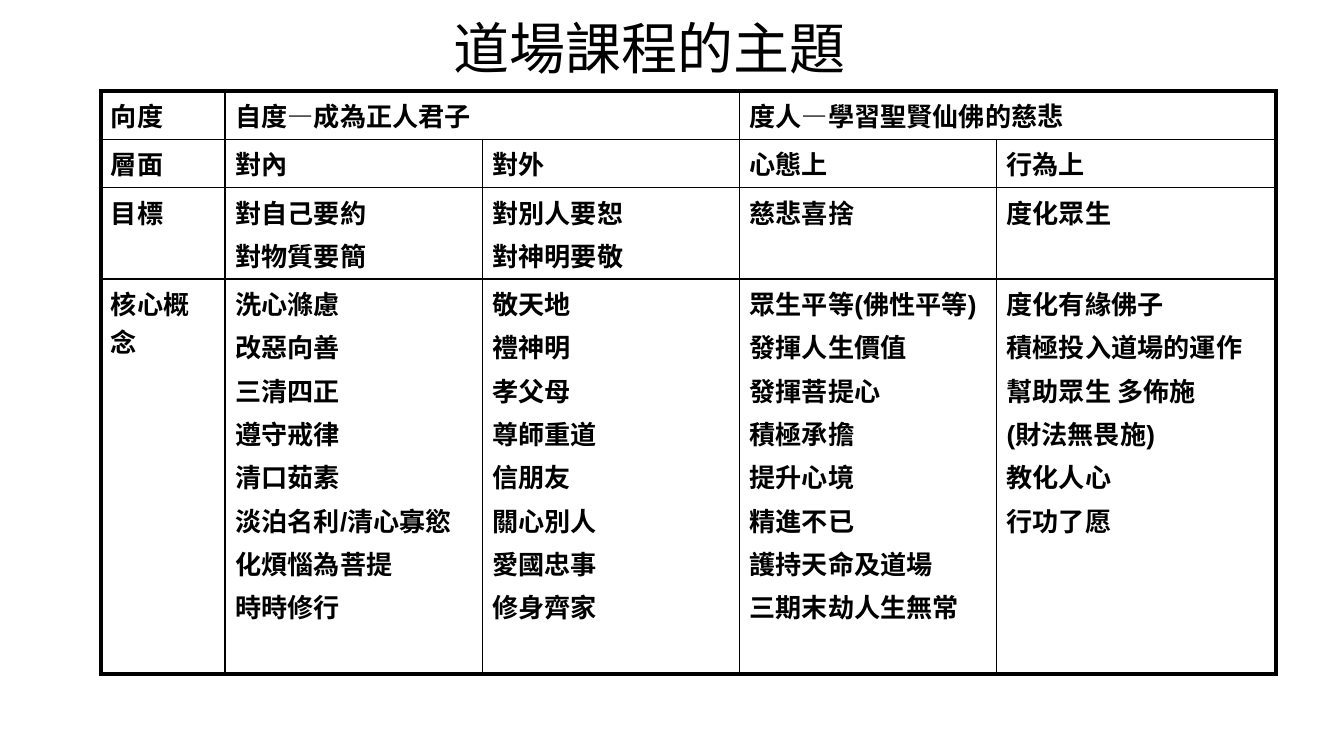
from lxml import etree
from pptx import Presentation
from pptx import util as u
from pptx.dml.color import RGBColor
from pptx.enum import text
from pptx.oxml import ns

WIDTH = u.Inches(10)
HEIGHT = WIDTH * 9 // 16
INK = "000000"
COLUMNS = [9.26, 19.13, 19.13, 19.13, 20.8]
ROWS = [4.98, 4.44, 8.36, 52.25]
TOPICS = [
    [["向度"], ["自度—成為正人君子"], [], ["度人—學習聖賢仙佛的慈悲"], []],
    [["層面"], ["對內"], ["對外"], ["心態上"], ["行為上"]],
    [["目標"], ["對自己要約", "對物質要簡"], ["對別人要恕", "對神明要敬"],
     ["慈悲喜捨"], ["度化眾生"]],
    [["核心概念"],
     ["洗心滌慮", "改惡向善", "三清四正", "遵守戒律", "清口茹素",
      "淡泊名利/清心寡慾", "化煩惱為菩提", "時時修行"],
     ["敬天地", "禮神明", "孝父母", "尊師重道", "信朋友", "關心別人",
      "愛國忠事", "修身齊家"],
     ["眾生平等(佛性平等)", "發揮人生價值", "發揮菩提心", "積極承擔",
      "提升心境", "精進不已", "護持天命及道場", "三期末劫人生無常"],
     ["度化有緣佛子", "積極投入道場的運作", "幫助眾生 多佈施",
      "(財法無畏施)", "教化人心", "行功了愿"]],
]


def across(percent):
    """Return a percentage of the slide width."""
    return int(WIDTH * percent / 100)


def down(percent):
    """Return a percentage of the slide height."""
    return int(HEIGHT * percent / 100)


def color(value):
    """Return the colour of a hex string."""
    return RGBColor.from_string(value)


def add_run(paragraph, wording, size, face, bold):
    """Append one formatted run to a paragraph."""
    run = paragraph.add_run()
    run.text = wording
    run.font.size, run.font.name, run.font.bold = u.Pt(size), face, bold
    run.font.color.rgb = color(INK)


def add_title(slide, wording):
    """Place the heading at the foot of the title placeholder."""
    title = slide.shapes.title
    title.left, title.top = across(14.8), down(-8.36)
    title.width, title.height = across(67.1), down(20.1)
    frame = title.text_frame
    frame.auto_size = text.MSO_AUTO_SIZE.NONE
    frame.vertical_anchor = text.MSO_ANCHOR.BOTTOM
    frame.margin_bottom = u.Inches(0.06)
    heading = frame.paragraphs[0]
    heading.alignment = text.PP_ALIGN.CENTER
    add_run(heading, wording, 30, "Calibri", False)


def draw_borders(cell, row, column):
    """Give a cell thin lines, thick where it meets the table edge."""
    last = column + (cell.span_width if cell.is_merge_origin else 1)
    outer = {"L": column == 0, "R": last == len(COLUMNS),
             "T": row == 0, "B": row == len(ROWS) - 1}
    properties = cell._tc.get_or_add_tcPr()
    for side, thick in outer.items():
        line = etree.SubElement(properties, ns.qn(f"a:ln{side}"),
                                w=str(u.Pt(2.25 if thick else 1)))
        fill = etree.SubElement(line, ns.qn("a:solidFill"))
        etree.SubElement(fill, ns.qn("a:srgbClr"), val=INK)


def fill_cell(cell, lines, hanging):
    """Write a list of lines into a cell."""
    cell.margin_left = cell.margin_right = u.Pt(5.4)
    cell.margin_top = cell.margin_bottom = u.Pt(2.7)
    frame = cell.text_frame
    for index, wording in enumerate(lines):
        paragraph = frame.add_paragraph() if index else frame.paragraphs[0]
        paragraph.space_before = u.Pt(2.8)
        if hanging:
            properties = paragraph._p.get_or_add_pPr()
            properties.set("marL", str(u.Inches(0.54)))
            properties.set("indent", str(u.Inches(-0.54)))
        add_run(paragraph, wording, 14, "Arial", True)


def add_topics(slide):
    """Build the table of course topics."""
    frame = slide.shapes.add_table(
        len(ROWS), len(COLUMNS), across(7.5), down(12.05),
        across(sum(COLUMNS)), down(sum(ROWS)))
    table = frame.table
    table.first_row = table.horz_banding = False
    for column, share in zip(table.columns, COLUMNS):
        column.width = across(share)
    for row, share in zip(table.rows, ROWS):
        row.height = down(share)
    for first in (1, 3):
        table.cell(0, first).merge(table.cell(0, first + 1))
    for row, entries in enumerate(TOPICS):
        for column, lines in enumerate(entries):
            cell = table.cell(row, column)
            draw_borders(cell, row, column)
            cell.fill.background()
            fill_cell(cell, lines, row == len(ROWS) - 1 and column > 0)


def main():
    """Build and save the slide."""
    deck = Presentation()
    deck.slide_width, deck.slide_height = WIDTH, HEIGHT
    slide = deck.slides.add_slide(deck.slide_layouts[5])
    add_title(slide, "道場課程的主題")
    add_topics(slide)
    deck.save("out.pptx")


if __name__ == "__main__":
    main()
